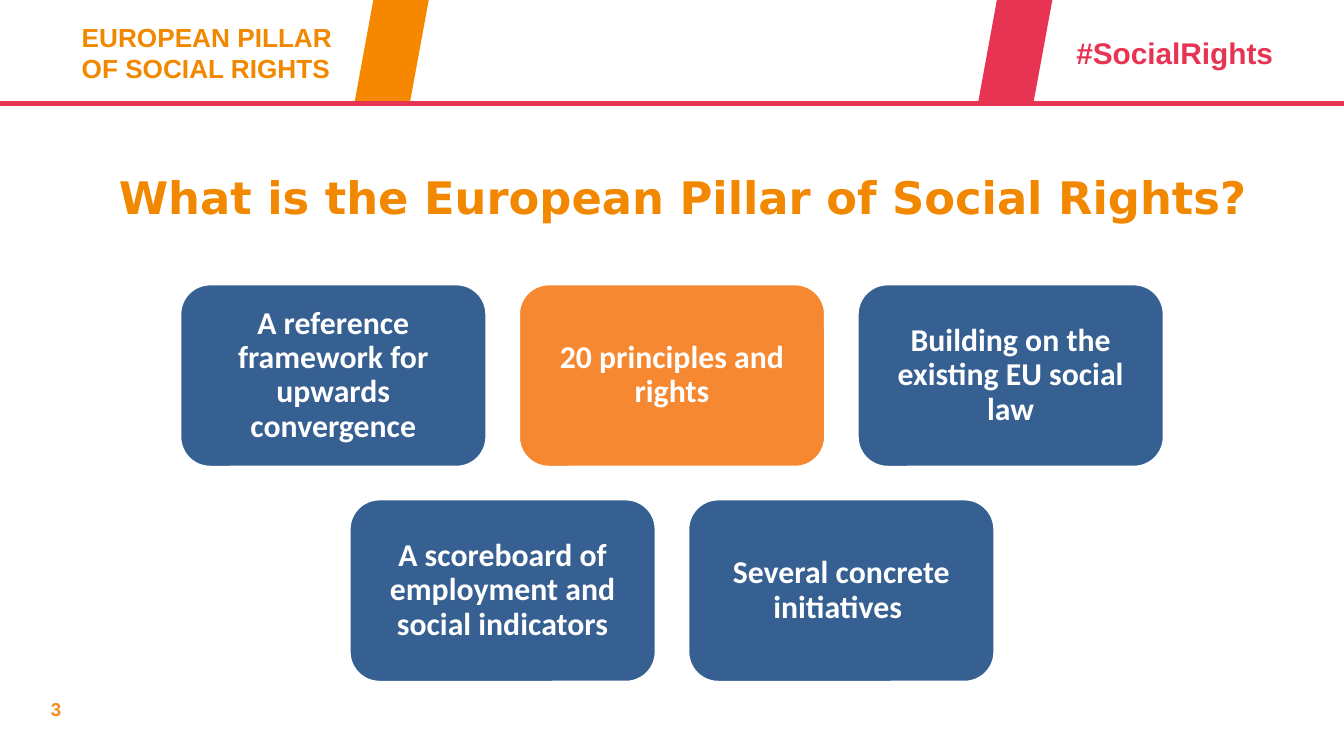
from pptx import Presentation
from pptx.dml.color import RGBColor
from pptx.enum.shapes import MSO_CONNECTOR, MSO_SHAPE
from pptx.enum.text import MSO_ANCHOR, MSO_AUTO_SIZE, PP_ALIGN
from pptx.oxml.ns import qn
from pptx.util import Inches, Pt
from lxml.etree import SubElement

COLORS = {
    "orange": "F18800", "band": "F68800", "number": "F68B20",
    "red": "E73452", "blue": "376092", "accent": "F68831", "white": "FFFFFF",
}


def color(name):
    return RGBColor.from_string(COLORS[name])


def write(shape, text, size, font, tint, align=PP_ALIGN.LEFT, **frame):
    """Put one bold paragraph in a shape; frame holds text frame settings."""
    box = shape.text_frame
    box.text = text
    frame = {"word_wrap": True, "auto_size": MSO_AUTO_SIZE.NONE, **frame}
    for key, value in frame.items():
        setattr(box, key, value)
    line = box.paragraphs[0]
    line.alignment = align
    for key, value in {"size": Pt(size), "name": font, "bold": True}.items():
        setattr(line.font, key, value)
    line.font.color.rgb = color(tint)
    return line


deck = Presentation()
deck.slide_width = Inches(10)
deck.slide_height = Inches(10 * 9 / 16)
slide = deck.slides.add_slide(deck.slide_layouts[5])
shapes = slide.shapes

# Header and page number
labels = [
    ("3", 0.28, 5.14, 2.18, 0.27, 10, "number"),
    ("EUROPEAN PILLAR \vOF SOCIAL RIGHTS", 0.51, 0.11, 2.54, 0.57, 14, "orange"),
    ("#SocialRights", 7.91, 0.21, 1.73, 0.37, 16, "red"),
]
for text, left, top, width, height, size, tint in labels:
    label = shapes.add_textbox(Inches(left), Inches(top), Inches(width), Inches(height))
    write(label, text, size, "Arial", tint)

rule = shapes.add_connector(
    MSO_CONNECTOR.STRAIGHT, Inches(0), Inches(0.77), Inches(10), Inches(0.77))
rule.line.color.rgb = color("red")
rule.line.width = Pt(2.25)
SubElement(rule._element.spPr, qn("a:effectLst"))

for left, tint in [(2.64, "band"), (7.28, "red")]:
    band = shapes.add_shape(
        MSO_SHAPE.PARALLELOGRAM, Inches(left), Inches(0), Inches(0.55), Inches(0.75))
    band.shadow.inherit = False
    band.fill.solid()
    band.fill.fore_color.rgb = color(tint)
    band.line.fill.background()

# Title
title = shapes.title
place = {"left": 0.16, "top": 1.08, "width": 9.84, "height": 0.77}
for key, value in place.items():
    setattr(title, key, Inches(value))
write(title, "What is the European Pillar of Social Rights?", 24, "DejaVu Sans",
      "orange", PP_ALIGN.CENTER, vertical_anchor=MSO_ANCHOR.MIDDLE)

# Cards, each row centred on the slide
rows = [
    [("A reference framework for upwards convergence", "blue"),
     ("20 principles and rights", "accent"),
     ("Building on the existing EU social law", "blue")],
    [("A scoreboard of employment and social indicators", "blue"),
     ("Several concrete initiatives ", "blue")],
]
WIDTH, HEIGHT, GAP = 2.29, 1.37, 0.23
sides = ("margin_left", "margin_top", "margin_right", "margin_bottom")
margins = dict.fromkeys(sides, Inches(0.07))
for row, cards in enumerate(rows):
    start = 5 - (len(cards) * (WIDTH + GAP) - GAP) / 2
    for col, (text, tint) in enumerate(cards):
        card = shapes.add_shape(
            MSO_SHAPE.ROUNDED_RECTANGLE, Inches(start + col * (WIDTH + GAP)),
            Inches(2.11 + row * (HEIGHT + GAP)), Inches(WIDTH), Inches(HEIGHT))
        card.shadow.inherit = False
        card.fill.solid()
        card.fill.fore_color.rgb = color(tint)
        card.line.color.rgb = color("white")
        card.line.width = Pt(2)
        line = write(card, text, 17, "Calibri", "white", PP_ALIGN.CENTER,
                     vertical_anchor=MSO_ANCHOR.MIDDLE, **margins)
        line.line_spacing = 0.9

deck.save("out.pptx")
